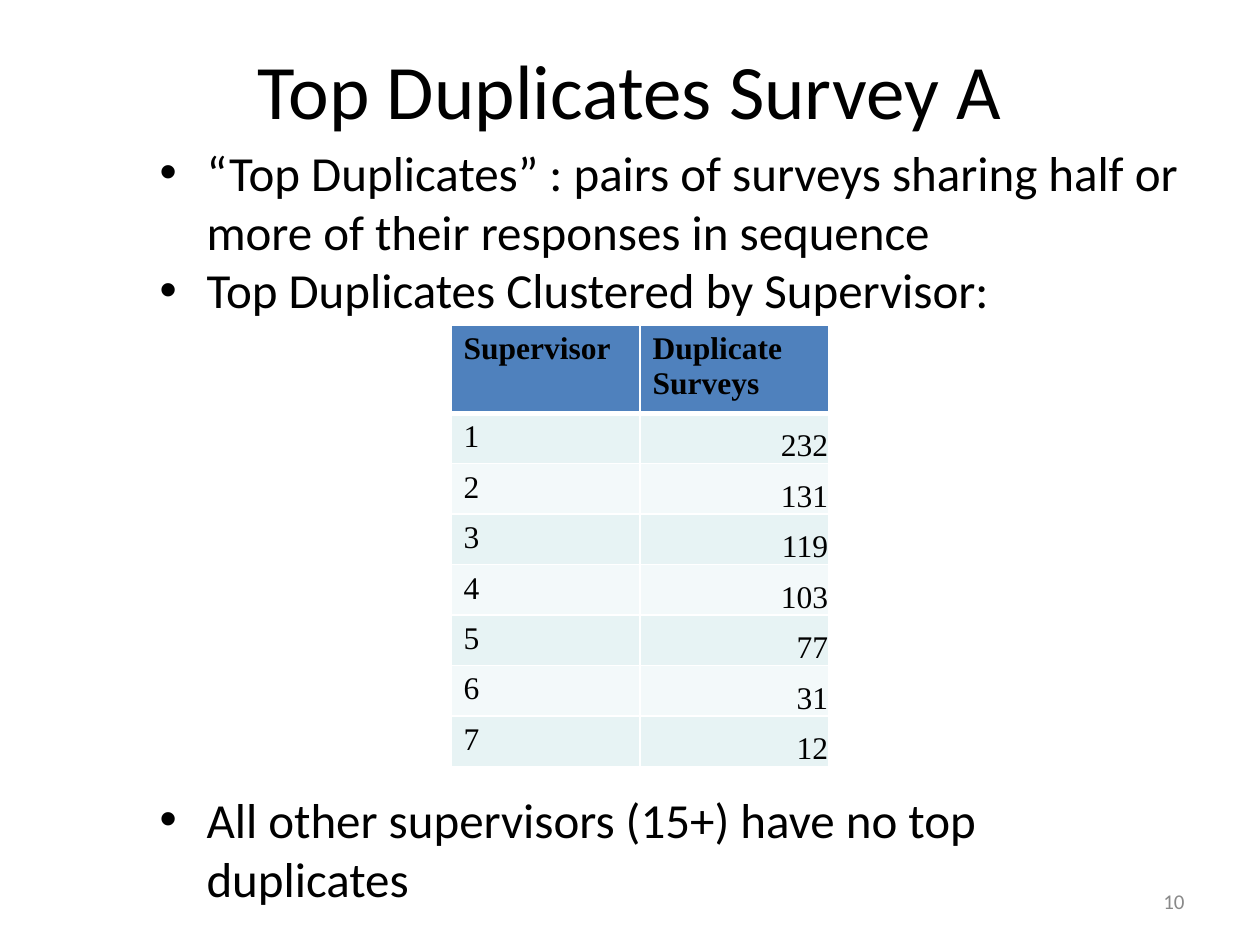
from lxml.etree import SubElement
from pptx import Presentation
from pptx.dml.color import RGBColor
from pptx.enum.text import MSO_ANCHOR, MSO_AUTO_SIZE, PP_ALIGN
from pptx.oxml import parse_xml
from pptx.oxml.ns import nsdecls, qn
from pptx.util import Pt

EMU_PER_PX = 914400 / 126
COLORS = {
    "text": "000000",
    "number": "898989",
    "header": "4F81BD",
    "odd": "E7F3F4",
    "even": "F3F9FA",
    "border": "FFFFFF",
}
BODY_FONT = "Calibri"
TABLE_FONT = "Times New Roman"
HEADERS = ["Supervisor", "Duplicate Surveys"]
DUPLICATES = [232, 131, 119, 103, 77, 31, 12]
BULLETS = [
    ("“Top Duplicates” : pairs of surveys sharing half or more of their responses in sequence", 0),
    ("Top Duplicates Clustered by Supervisor:", 0),
    ("All other supervisors (15+) have no top duplicates", 269),
]


def px(length):
    return round(length * EMU_PER_PX)


class SlideBuilder:
    def __init__(self, slide):
        self.slide = slide

    def place(self, shape, left, top, width, height):
        shape.left, shape.top = px(left), px(top)
        shape.width, shape.height = px(width), px(height)

    def run(self, paragraph, text, size, font=BODY_FONT, color="text", bold=False):
        run = paragraph.add_run()
        run.text = text
        run.font.size = Pt(size)
        run.font.name = font
        run.font.bold = bold
        run.font.color.rgb = RGBColor.from_string(COLORS[color])

    def title(self, text, *box):
        shape = self.slide.shapes.title
        self.place(shape, *box)
        frame = shape.text_frame
        frame.auto_size = MSO_AUTO_SIZE.NONE
        frame.vertical_anchor = MSO_ANCHOR.MIDDLE
        paragraph = frame.paragraphs[0]
        paragraph.alignment = PP_ALIGN.CENTER
        self.run(paragraph, text, 44)

    def bullets(self, items, *box):
        shape = self.slide.placeholders[1]
        self.place(shape, *box)
        frame = shape.text_frame
        frame.auto_size = MSO_AUTO_SIZE.NONE
        for index, (text, gap) in enumerate(items):
            paragraph = frame.add_paragraph() if index else frame.paragraphs[0]
            paragraph.space_before = Pt(gap)
            properties = paragraph._p.get_or_add_pPr()
            properties.set("marL", str(px(47)))
            properties.set("indent", str(-px(47)))
            SubElement(properties, qn("a:buFont"), typeface="Arial")
            SubElement(properties, qn("a:buChar"), char="•")
            self.run(paragraph, text, 28)

    def slide_number(self, text, *box):
        shape = self.slide.shapes.add_textbox(*map(px, box))
        frame = shape.text_frame
        frame.word_wrap = True
        frame.vertical_anchor = MSO_ANCHOR.MIDDLE
        paragraph = frame.paragraphs[0]
        paragraph.alignment = PP_ALIGN.RIGHT
        self.run(paragraph, text, 12, color="number")

    def borders(self, cell, top, bottom):
        properties = cell._tc.get_or_add_tcPr()
        widths = {"lnL": 1, "lnR": 1, "lnT": top, "lnB": bottom}
        for index, (side, width) in enumerate(widths.items()):
            line = parse_xml(
                f'<a:{side} {nsdecls("a")} w="{Pt(width)}"><a:solidFill>'
                f'<a:srgbClr val="{COLORS["border"]}"/></a:solidFill></a:{side}>'
            )
            properties.insert(index, line)

    def cell(self, cell, text, fill, bold=False, number=False):
        cell.fill.solid()
        cell.fill.fore_color.rgb = RGBColor.from_string(COLORS[fill])
        paragraph = cell.text_frame.paragraphs[0]
        if number:
            cell.vertical_anchor = MSO_ANCHOR.BOTTOM
            cell.margin_left = cell.margin_right = cell.margin_top = px(1)
            cell.margin_bottom = 0
            paragraph.alignment = PP_ALIGN.RIGHT
        self.run(paragraph, text, 18, TABLE_FONT, bold=bold)

    def table(self, headers, values, left, top, width, header_height, row_height):
        rows = [headers] + [[str(rank), str(value)] for rank, value in enumerate(values, 1)]
        height = header_height + row_height * len(values)
        frame = self.slide.shapes.add_table(
            len(rows), len(headers), px(left), px(top), px(width), px(height)
        )
        table = frame.table
        for row_index, texts in enumerate(rows):
            is_header = row_index == 0
            table.rows[row_index].height = px(header_height if is_header else row_height)
            fill = "header" if is_header else ("odd" if row_index % 2 else "even")
            for column_index, text in enumerate(texts):
                cell = table.cell(row_index, column_index)
                self.cell(cell, text, fill, is_header, column_index == 1 and not is_header)
                self.borders(cell, 3 if row_index == 1 else 1, 3 if is_header else 1)


def main():
    presentation = Presentation()
    presentation.slide_width, presentation.slide_height = px(1260), px(945)
    slide = presentation.slides.add_slide(presentation.slide_layouts[1])
    builder = SlideBuilder(slide)
    builder.title("Top Duplicates Survey A", 63, 10, 1134, 158)
    builder.bullets(BULLETS, 147, 136, 1050, 665)
    builder.slide_number("10", 903, 876, 294, 50)
    builder.table(HEADERS, DUPLICATES, 451, 325, 378, 82, 47)
    presentation.save("out.pptx")


if __name__ == "__main__":
    main()
